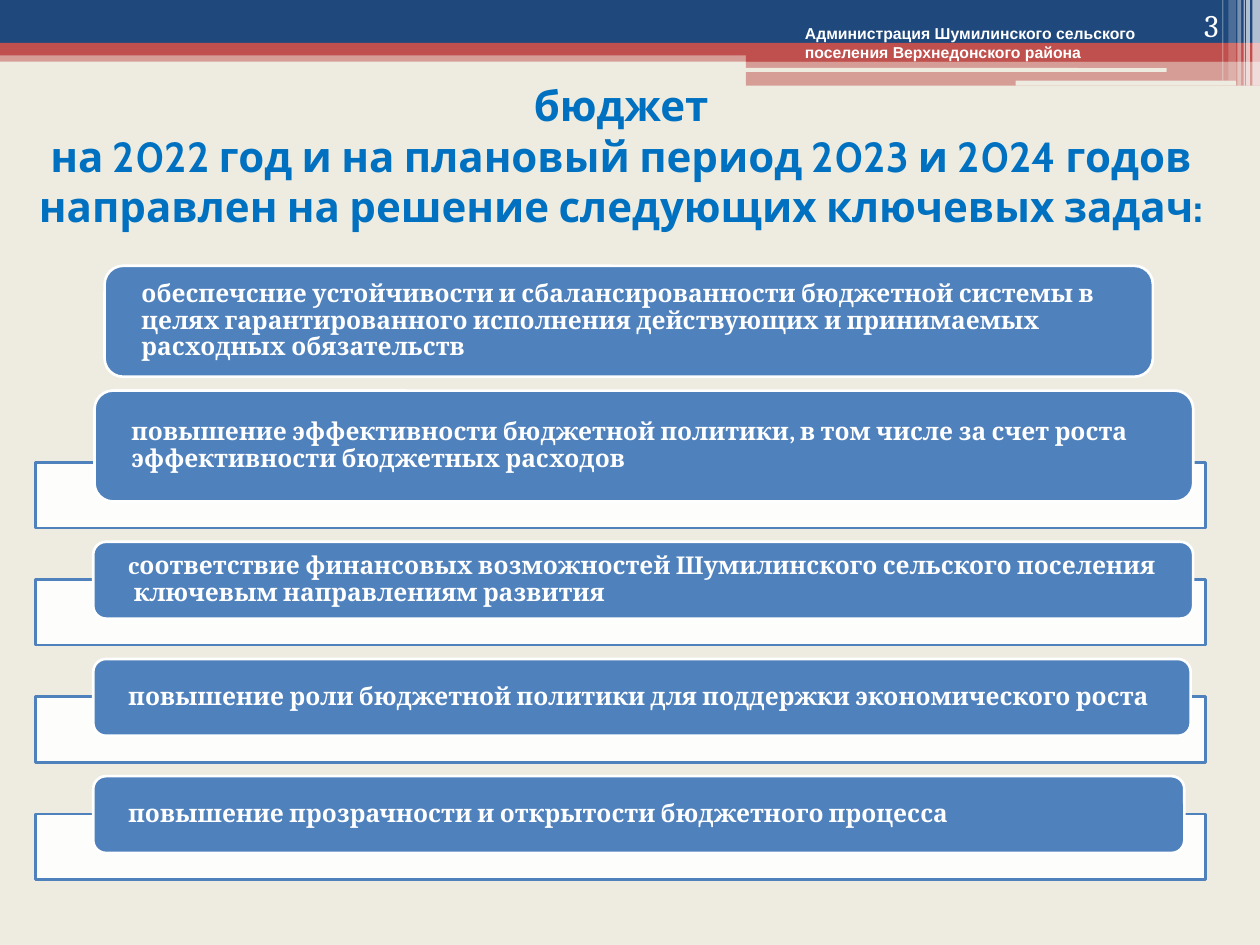
from pptx import Presentation
from pptx.dml.color import RGBColor
from pptx.enum.shapes import MSO_SHAPE
from pptx.enum.text import MSO_ANCHOR, PP_ALIGN
from pptx.oxml.xmlchemy import OxmlElement
from pptx.util import Inches, Pt

WHITE = RGBColor(0xFF, 0xFF, 0xFF)
CREAM = RGBColor(0xEE, 0xEC, 0xE1)
NAVY = RGBColor(0x1F, 0x49, 0x7D)
RED = RGBColor(0xC0, 0x50, 0x4D)
BLUE = RGBColor(0x4F, 0x81, 0xBD)
TITLE_BLUE = RGBColor(0x00, 0x70, 0xC0)

TITLE = ("бюджет\vна 2022 год и на плановый период 2023 и 2024 годов"
         "\vнаправлен на решение следующих ключевых задач:")
ORGANISATION = "Администрация Шумилинского сельского поселения Верхнедонского района"
PAGE_NUMBER = "3"

TALL, SHORT = 0.88, 0.61
TASKS = [
    ("обеспечсние устойчивости и сбалансированности бюджетной системы в целях "
     "гарантированного исполнения действующих и принимаемых расходных обязательств",
     0.83, 8.32, TALL, False),
    ("повышение эффективности бюджетной политики, в том числе за счет роста "
     "эффективности бюджетных расходов", 0.75, 8.72, TALL, True),
    ("cоответствие финансовых возможностей Шумилинского сельского поселения"
     "\v ключевым направлениям развития", 0.74, 8.73, SHORT, True),
    ("повышение роли бюджетной политики для поддержки экономического роста",
     0.74, 8.71, SHORT, True),
    ("повышение прозрачности и открытости бюджетного процесса",
     0.74, 8.66, SHORT, True),
]
FIRST_TOP, ROW_GAP = 2.11, 0.11
TRAY_LEFT, TRAY_WIDTH, TRAY_HEIGHT, TRAY_OVERLAP = 0.28, 9.29, 0.52, 0.31

BANDS = [
    (0, 0.4, 10, 0.09, RED, 50),
    (0, 0, 10, 0.34, NAVY, 100),
    (0, 0.34, 10, 0.1, RED, 100),
    (5.92, 0.39, 4.08, 0.1, RED, 100),
    (5.92, 0.48, 4.08, 0.2, RED, 50),
]
SLOTS = [(5.91, 0.54, 3.35, 0.03), (8.06, 0.64, 1.75, 0.04)]
STRIPES = [
    (9.94, 0.06, 0.68, 65), (9.89, 0.03, 0.68, 65), (9.87, 0.01, 0.68, 60),
    (9.82, 0.03, 0.68, 40), (9.75, 0.06, 0.64, 20), (9.7, 0.01, 0.64, 30),
]


def add_block(slide, box, color, opacity=100, line=None, kind=MSO_SHAPE.RECTANGLE):
    shape = slide.shapes.add_shape(kind, *map(Inches, box))
    shape.shadow.inherit = False
    shape.fill.solid()
    shape.fill.fore_color.rgb = color
    if opacity < 100:
        alpha = OxmlElement("a:alpha")
        alpha.set("val", str(opacity * 1000))
        shape.fill._xPr.solidFill[0].append(alpha)
    if line is None:
        shape.line.fill.background()
    else:
        shape.line.color.rgb = line
        shape.line.width = Pt(1.5)
    return shape


def write(shape, text, font, size, color, bold=True, align=PP_ALIGN.LEFT,
          anchor=MSO_ANCHOR.MIDDLE):
    frame = shape.text_frame
    frame.text = text
    frame.word_wrap = True
    frame.vertical_anchor = anchor
    paragraph = frame.paragraphs[0]
    paragraph.alignment = align
    for run in paragraph.runs:
        run.font.name = font
        run.font.size = Pt(size)
        run.font.bold = bold
        run.font.color.rgb = color
    return frame


def add_header(slide):
    for *box, color, opacity in BANDS:
        add_block(slide, box, color, opacity)
    for box in SLOTS:
        add_block(slide, box, CREAM, kind=MSO_SHAPE.ROUNDED_RECTANGLE)
    for left, width, height, opacity in STRIPES:
        add_block(slide, (left, 0, width, height), WHITE, opacity)
    organisation = slide.shapes.add_textbox(*map(Inches, (6.29, 0.14, 3.11, 0.4)))
    write(organisation, ORGANISATION, "Arial", 9, WHITE, anchor=MSO_ANCHOR.TOP)
    number = slide.shapes.add_textbox(*map(Inches, (8.94, 0, 0.83, 0.4)))
    write(number, PAGE_NUMBER, "Cambria", 18, WHITE, False, PP_ALIGN.RIGHT, MSO_ANCHOR.BOTTOM)


def add_title(slide):
    title = slide.shapes.title
    title.left, title.top, title.width, title.height = map(Inches, (0.05, 0.71, 9.76, 1.05))
    write(title, TITLE, "Cabin", 24, TITLE_BLUE, align=PP_ALIGN.CENTER)


def add_tasks(slide):
    top = FIRST_TOP
    for text, left, width, height, has_tray in TASKS:
        bottom = top + height
        if has_tray:
            tray_top = bottom - TRAY_OVERLAP
            add_block(slide, (TRAY_LEFT, tray_top, TRAY_WIDTH, TRAY_HEIGHT), WHITE, 90, BLUE)
            bottom = tray_top + TRAY_HEIGHT
        card = add_block(slide, (left, top, width, height), BLUE, line=WHITE,
                         kind=MSO_SHAPE.ROUNDED_RECTANGLE)
        frame = write(card, text, "Cambria", 14, WHITE)
        frame.margin_left = frame.margin_right = Inches(0.25)
        frame.margin_top = frame.margin_bottom = 0
        frame.paragraphs[0].line_spacing = 0.9
        top = bottom + ROW_GAP


def main():
    presentation = Presentation()
    presentation.slide_width, presentation.slide_height = Inches(10), Inches(7.5)
    slide = presentation.slides.add_slide(presentation.slide_layouts[5])
    slide.background.fill.solid()
    slide.background.fill.fore_color.rgb = CREAM
    add_header(slide)
    add_title(slide)
    add_tasks(slide)
    presentation.save("out.pptx")


if __name__ == "__main__":
    main()
